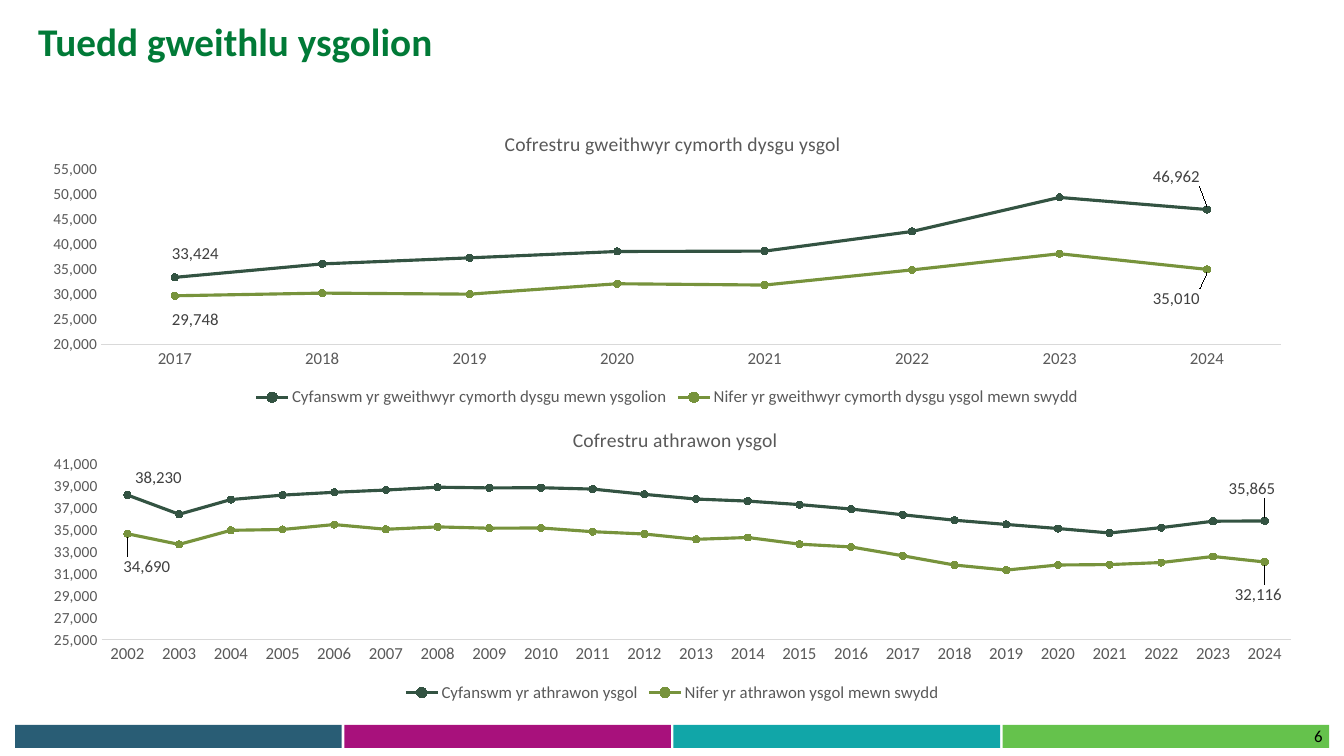
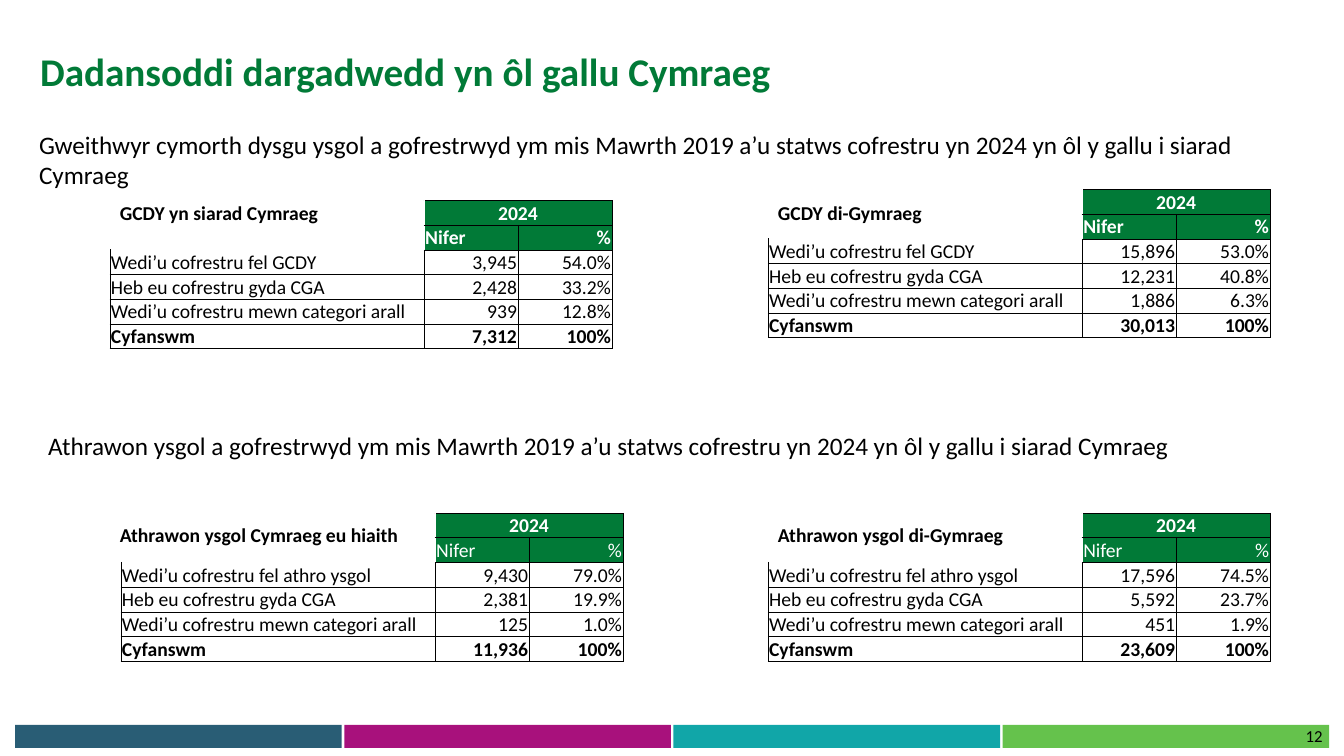
from dataclasses import dataclass

from lxml import etree
from pptx import Presentation
from pptx import util as u
from pptx.chart.data import CategoryChartData
from pptx.dml.color import RGBColor
from pptx.enum import chart as charts, shapes, text
from pptx.oxml.ns import qn


@dataclass(frozen=True)
class Theme:
    font: str = "Calibri"
    green: str = "017A37"
    black: str = "000000"
    white: str = "FFFFFF"
    grey: str = "595959"
    label: str = "404040"
    axis: str = "D9D9D9"
    series: tuple = ("335342", "77933C")
    bands: tuple = ("295D75", "A8117C", "11A6A8", "65C24C")
    title_size: int = 28
    body_size: int = 18
    table_size: int = 14
    small_size: int = 12
    axis_size: int = 11


THEME = Theme()
WIDTH, HEIGHT = u.Inches(13.333), u.Inches(7.5)
LEFT, CENTRE, RIGHT = text.PP_ALIGN.LEFT, text.PP_ALIGN.CENTER, text.PP_ALIGN.RIGHT
C15 = "http://schemas.microsoft.com/office/drawing/2012/chart"


# Shared helpers
def box(left, top, width, height):
    """Turn percentages of the slide into lengths."""
    return [int(share * side / 100) for share, side in
            zip((left, top, width, height), (WIDTH, HEIGHT, WIDTH, HEIGHT))]


def apply(target, **values):
    for name, value in values.items():
        setattr(target, name, value)


def style_font(font, size, color=THEME.black, bold=False):
    apply(font, name=THEME.font, size=u.Pt(size), bold=bold)
    font.color.rgb = RGBColor.from_string(color)


def fill_solid(fill, color):
    fill.solid()
    fill.fore_color.rgb = RGBColor.from_string(color)


def style_line(line, color, width):
    line.color.rgb = RGBColor.from_string(color)
    line.width = u.Pt(width)


# Text and slide frame
def add_text(slide, place, words, size, align=LEFT, spacing=None, **font):
    shape = slide.shapes.add_textbox(*box(*place))
    shape.text_frame.word_wrap = True
    paragraph = shape.text_frame.paragraphs[0]
    apply(paragraph, alignment=align, line_spacing=spacing)
    run = paragraph.add_run()
    run.text = words
    style_font(run.font, size, **font)


def add_frame(presentation, title, place, number):
    slide = presentation.slides.add_slide(presentation.slide_layouts[6])
    for column, color in enumerate(THEME.bands):
        band = slide.shapes.add_shape(shapes.MSO_SHAPE.RECTANGLE,
                                      *box(1.13 + 24.49 * column, 95.87, 24.3, 3.07))
        band.shadow.inherit = False
        fill_solid(band.fill, color)
        band.line.fill.background()
    add_text(slide, (93.75, 95.33, 5.4, 4), number, THEME.small_size, align=RIGHT)
    add_text(slide, place, title, THEME.title_size, spacing=0.9,
             color=THEME.green, bold=True)
    return slide


# Charts
def set_layout(parent, index, **values):
    for old in parent.findall(qn("c:layout")):
        parent.remove(old)
    layout = etree.Element(qn("c:layout"))
    manual = etree.SubElement(layout, qn("c:manualLayout"))
    for name, value in values.items():
        etree.SubElement(manual, qn(f"c:{name}"), val=str(value))
    parent.insert(index, layout)


def add_leader_lines(labels):
    extensions = etree.SubElement(labels, qn("c:extLst"))
    extension = etree.SubElement(extensions, qn("c:ext"), nsmap={"c15": C15},
                                 uri="{CE6537A1-D6FC-4f65-9D91-7224C49458BB}")
    etree.SubElement(extension, f"{{{C15}}}showLeaderLines", val="1")


def style_series(series, color, position, offsets):
    series.smooth = False
    style_line(series.format.line, color, 2.25)
    marker = series.marker
    apply(marker, style=charts.XL_MARKER_STYLE.CIRCLE, size=5)
    fill_solid(marker.format.fill, color)
    style_line(marker.format.line, color, 0.75)
    series.data_labels.show_value = False
    last = len(series.values) - 1
    for point, (x, y) in zip((0, last), offsets):
        label = series.points[point].data_label
        style_font(label.font, THEME.small_size, THEME.label)
        label.position = position
        set_layout(series.data_labels._element.findall(qn("c:dLbl"))[-1], 1, x=x, y=y)
    add_leader_lines(series.data_labels._element)


def add_line_chart(slide, place, title, title_left, first_year, scale, rows):
    """Each row holds a series name, its values and two label offsets."""
    data = CategoryChartData(number_format="#,##0")
    data.categories = [str(first_year + i) for i in range(len(rows[0][1]))]
    for name, values, _ in rows:
        data.add_series(name, values)
    chart = slide.shapes.add_chart(charts.XL_CHART_TYPE.LINE_MARKERS,
                                   *box(*place), data).chart
    style_font(chart.font, THEME.small_size, THEME.grey)

    # Title, legend and plot area
    chart.has_title = True
    frame = chart.chart_title.text_frame
    frame.text = title
    style_font(frame.paragraphs[0].runs[0].font, THEME.table_size, THEME.grey)
    set_layout(chart.chart_title._element, 1, xMode="edge", yMode="edge",
               x=title_left, y=0.06)
    chart.has_legend = True
    apply(chart.legend, position=charts.XL_LEGEND_POSITION.BOTTOM,
          include_in_layout=False)
    style_font(chart.legend.font, THEME.small_size, THEME.grey)
    plot = chart.plots[0]
    plot.vary_by_categories = False
    set_layout(plot._element.getparent(), 0, layoutTarget="inner", xMode="edge",
               yMode="edge", x=0.057, y=0.2, w=0.923, h=0.58)

    # Axes
    no_tick = charts.XL_TICK_MARK.NONE
    for axis, size in ((chart.category_axis, THEME.small_size),
                       (chart.value_axis, THEME.axis_size)):
        apply(axis, major_tick_mark=no_tick, minor_tick_mark=no_tick,
              has_major_gridlines=False)
        style_font(axis.tick_labels.font, size, THEME.grey)
    style_line(chart.category_axis.format.line, THEME.axis, 0.75)
    chart.value_axis.format.line.fill.background()
    apply(chart.value_axis, **dict(zip(
        ("minimum_scale", "maximum_scale", "major_unit"), scale)))
    apply(chart.value_axis.tick_labels, number_format="#,##0",
          number_format_is_linked=False)

    sides = (charts.XL_LABEL_POSITION.ABOVE, charts.XL_LABEL_POSITION.BELOW)
    for series, color, side, row in zip(plot.series, THEME.series, sides, rows):
        style_series(series, color, side, row[2])


# Tables
def add_border(cell):
    properties = cell._tc.get_or_add_tcPr()
    for side in "LRTB":
        line = etree.SubElement(properties, qn(f"a:ln{side}"), w=str(u.Pt(0.5)))
        fill = etree.SubElement(line, qn("a:solidFill"))
        etree.SubElement(fill, qn("a:srgbClr"), val=THEME.black)


def fill_cell(cell, words, align, boxed, header, bold):
    apply(cell, margin_left=u.Inches(0.01), margin_right=u.Inches(0.01),
          margin_top=u.Inches(0.01), margin_bottom=0,
          vertical_anchor=text.MSO_ANCHOR.BOTTOM)
    if boxed:
        add_border(cell)
    if header:
        fill_solid(cell.fill, THEME.green)
    else:
        cell.fill.background()
    paragraph = cell.text_frame.paragraphs[0]
    paragraph.alignment = align
    if words:
        run = paragraph.add_run()
        run.text = words
        style_font(run.font, THEME.table_size,
                   THEME.white if header else THEME.black, bold)
    else:
        etree.SubElement(paragraph._p, qn("a:endParaRPr"),
                         sz=str(THEME.table_size * 100))


def add_status_table(slide, left, top, registered, figures, bold_units):
    names = (registered, "Heb eu cofrestru gyda CGA",
             "Wedi’u cofrestru mewn categori arall", "Cyfanswm")
    rows = [("", "2024", ""), ("", "Nifer", "%")]
    rows += [(name, *pair) for name, pair in zip(names, figures)]
    place = box(left, top, 37.35, 3.27 * len(rows))
    table = slide.shapes.add_table(len(rows), 3, *place).table
    apply(table, first_row=False, horz_banding=False)
    for column, share in zip(table.columns, (0.626, 0.187, 0.187)):
        column.width = int(place[2] * share)
    table.cell(0, 1).merge(table.cell(0, 2))
    for r, row in enumerate(rows):
        table.rows[r].height = place[3] // len(rows)
        for c, words in enumerate(row):
            header = r < 2 and c > 0
            align = CENTRE if r == 0 else LEFT if c == 0 or words == "Nifer" else RIGHT
            bold = r in (0, len(rows) - 1) or (r == 1 and bold_units)
            fill_cell(table.cell(r, c), words, align, r > 1 or c > 0, header, bold)


# Slides
def build_trend_slide(presentation):
    slide = add_frame(presentation, "Tuedd gweithlu ysgolion", (2.1, 2.4, 43.4, 12), "6")
    add_line_chart(
        slide, (2.1, 53.47, 95.85, 40), "Cofrestru athrawon ysgol", 0.42, 2002,
        (25000, 41000, 2000),
        [("Cyfanswm yr athrawon ysgol",
          (38230, 36473, 37816, 38220, 38479, 38685, 38942, 38879, 38896, 38770, 38290,
           37862, 37673, 37355, 36951, 36426, 35929, 35545, 35171, 34766, 35256, 35837,
           35865), ((0.024, 0), (-0.01, -0.05))),
         ("Nifer yr athrawon ysgol mewn swydd",
          (34690, 33723, 35010, 35086, 35533, 35102, 35320, 35200, 35224, 34882, 34672,
           34189, 34355, 33746, 33493, 32680, 31836, 31379, 31843, 31881, 32066, 32619,
           32116), ((0.015, 0.05), (-0.005, 0.05)))])
    add_line_chart(
        slide, (2.1, 14.4, 95.1, 40), "Cofrestru gweithwyr cymorth dysgu ysgol", 0.37,
        2017, (20000, 55000, 5000),
        [("Cyfanswm yr gweithwyr cymorth dysgu mewn ysgolion",
          (33424, 36103, 37325, 38594, 38668, 42585, 49380, 46962),
          ((0.016, -0.02), (-0.024, -0.05))),
         ("Nifer yr gweithwyr cymorth dysgu ysgol mewn swydd",
          (29748, 30275, 30071, 32145, 31887, 34914, 38139, 35010),
          ((0.016, 0.02), (-0.024, 0.04)))])


def build_language_slide(presentation):
    slide = add_frame(presentation, "Dadansoddi dargadwedd yn ôl gallu Cymraeg",
                      (2.25, 6.27, 63.3, 12), "12")
    ending = "a gofrestrwyd ym mis Mawrth 2019 a’u statws cofrestru yn 2024 yn ôl y gallu i siarad Cymraeg"
    for place, group in (((2.17, 16.4, 95.7, 9.47), "Gweithwyr cymorth dysgu ysgol"),
                         ((2.85, 56.27, 95.7, 5.33), "Athrawon ysgol")):
        add_text(slide, place, f"{group} {ending}", THEME.body_size)

    left, right = 8.18, 57.15
    support, teacher = "Wedi’u cofrestru fel GCDY", "Wedi’u cofrestru fel athro ysgol"
    tables = (
        (left, 26.53, support, (("3,945", "54.0%"), ("2,428", "33.2%"),
                                ("939", "12.8%"), ("7,312", "100%")), True),
        (right, 25.07, support, (("15,896", "53.0%"), ("12,231", "40.8%"),
                                 ("1,886", "6.3%"), ("30,013", "100%")), True),
        (9, 67.87, teacher, (("9,430", "79.0%"), ("2,381", "19.9%"),
                             ("125", "1.0%"), ("11,936", "100%")), False),
        (right, 67.87, teacher, (("17,596", "74.5%"), ("5,592", "23.7%"),
                                 ("451", "1.9%"), ("23,609", "100%")), False))
    for table in tables:
        add_status_table(slide, *table)

    captions = ((left, 25.87, "GCDY yn siarad Cymraeg"),
                (right, 25.87, "GCDY di-Gymraeg"),
                (left, 68.53, "Athrawon ysgol Cymraeg eu hiaith"),
                (right, 68.53, "Athrawon ysgol di-Gymraeg"))
    for x, y, words in captions:
        add_text(slide, (x, y, 23.9, 4.53), words, THEME.table_size, bold=True)


def main():
    presentation = Presentation()
    apply(presentation, slide_width=WIDTH, slide_height=HEIGHT)
    build_trend_slide(presentation)
    build_language_slide(presentation)
    presentation.save("out.pptx")


if __name__ == "__main__":
    main()
